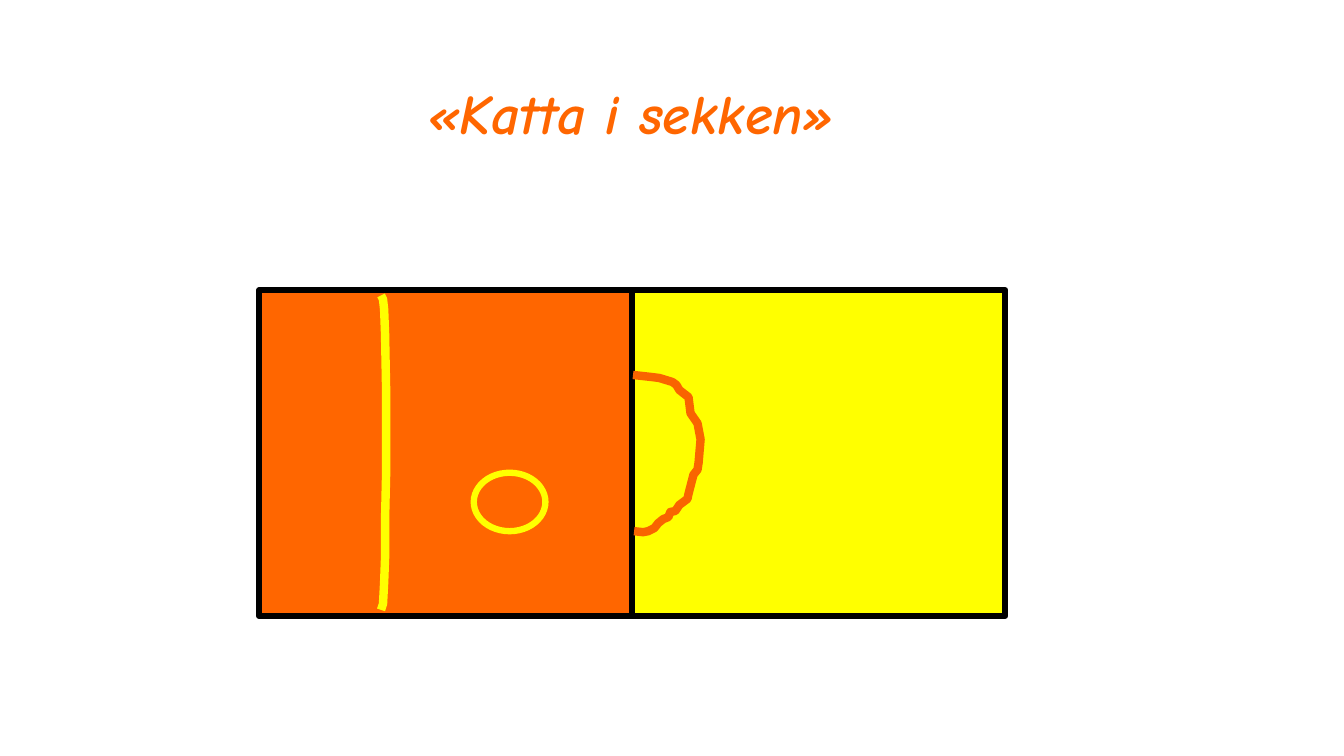
from dataclasses import dataclass

from lxml import etree
from pptx import Presentation
from pptx.dml.color import RGBColor
from pptx.enum.shapes import MSO_SHAPE
from pptx.enum.text import MSO_ANCHOR, MSO_AUTO_SIZE, PP_ALIGN
from pptx.oxml.ns import qn
from pptx.shapes.autoshape import Shape
from pptx.slide import Slide
from pptx.util import Inches, Pt

RECTANGLE = MSO_SHAPE.RECTANGLE
CONNECTOR_DISC = MSO_SHAPE.FLOWCHART_CONNECTOR
BOTTOM = MSO_ANCHOR.BOTTOM
CENTER = PP_ALIGN.CENTER
NO_AUTOFIT = MSO_AUTO_SIZE.NONE
TITLE_ONLY = 5

WIDTH = Inches(13.33)
HEIGHT = Inches(7.5)


@dataclass(frozen=True)
class Theme:
    font: str = "Comic Neue"
    title_size: float = 40
    outline: float = 4.5
    stroke: float = 6
    orange: str = "FF6600"
    arc_orange: str = "F96400"
    yellow: str = "FFFF00"
    black: str = "000000"


@dataclass(frozen=True)
class Area:
    left: float
    top: float
    width: float
    height: float


@dataclass(frozen=True)
class Panel:
    kind: MSO_SHAPE
    area: Area
    fill: str
    line: str


@dataclass(frozen=True)
class Stroke:
    points: tuple[tuple[float, float], ...]
    color: str


THEME = Theme()
TITLE_AREA = Area(4.43, 3.33, 85, 16.67)
COURT = Area(19.28, 38.4, 55.52, 43.07)
HALF = COURT.width / 2

HALVES = [
    Panel(
        RECTANGLE,
        Area(COURT.left + column * HALF, COURT.top, HALF, COURT.height),
        fill,
        THEME.black,
    )
    for column, fill in enumerate((THEME.orange, THEME.yellow))
]
RING = Panel(CONNECTOR_DISC, Area(35.25, 62.53, 5.33, 7.73), THEME.orange, THEME.yellow)

THROW_LINE = Stroke(
    (
        (28.35, 39.07), (28.5, 39.6), (28.58, 40.93), (28.65, 44.13),
        (28.73, 51.87), (28.73, 62.4), (28.65, 68.8), (28.65, 73.87),
        (28.58, 77.07), (28.5, 79.87), (28.35, 80.67),
    ),
    THEME.yellow,
)
GOAL_ARC = Stroke(
    (
        (47.1, 49.6), (48.45, 49.87), (49.05, 50), (50.03, 50.53),
        (50.33, 50.93), (50.55, 51.6), (50.93, 52.13), (51.23, 52.53),
        (51.38, 54.67), (51.9, 56), (52.13, 58.13), (51.98, 61.2),
        (51.9, 62.13), (51.6, 62.8), (51.23, 65.33), (51.15, 66),
        (50.55, 66.8), (50.25, 67.6), (49.88, 67.73), (49.73, 68.4),
        (49.35, 68.67), (48.98, 69.2), (48.68, 69.87), (48.23, 70.27),
        (47.85, 70.4), (47.18, 70.27),
    ),
    THEME.arc_orange,
)


def across(percent: float) -> int:
    return round(WIDTH * percent / 100)


def down(percent: float) -> int:
    return round(HEIGHT * percent / 100)


def bounds(area: Area) -> tuple[int, int, int, int]:
    return across(area.left), down(area.top), across(area.width), down(area.height)


def set_line(shape: Shape, color: str, width: float) -> None:
    shape.shadow.inherit = False
    shape.line.color.rgb = RGBColor.from_string(color)
    shape.line.width = Pt(width)
    etree.SubElement(shape.line.fill._xPr, qn("a:round"))


def draw_panel(page: Slide, panel: Panel) -> None:
    shape = page.shapes.add_shape(panel.kind, *bounds(panel.area))
    shape.fill.solid()
    shape.fill.fore_color.rgb = RGBColor.from_string(panel.fill)
    set_line(shape, panel.line, THEME.outline)


def draw_stroke(page: Slide, stroke: Stroke) -> None:
    start, *rest = [(across(x), down(y)) for x, y in stroke.points]
    builder = page.shapes.build_freeform(*start)
    builder.add_line_segments(rest, close=False)
    shape = builder.convert_to_shape()
    shape.fill.background()
    set_line(shape, stroke.color, THEME.stroke)


def draw_title(page: Slide, text: str) -> None:
    title = page.shapes.title
    title.left, title.top, title.width, title.height = bounds(TITLE_AREA)
    frame = title.text_frame
    frame.text = text
    frame.word_wrap = True
    frame.auto_size = NO_AUTOFIT
    frame.vertical_anchor = BOTTOM
    para = frame.paragraphs[0]
    para.alignment = CENTER
    font = para.runs[0].font
    font.name = THEME.font
    font.size = Pt(THEME.title_size)
    font.bold = True
    font.italic = True
    font.color.rgb = RGBColor.from_string(THEME.orange)


def main() -> None:
    deck = Presentation()
    deck.slide_width = WIDTH
    deck.slide_height = HEIGHT
    page = deck.slides.add_slide(deck.slide_layouts[TITLE_ONLY])
    draw_title(page, "«Katta i sekken»")
    for half in HALVES:
        draw_panel(page, half)
    for stroke in (THROW_LINE, GOAL_ARC):
        draw_stroke(page, stroke)
    draw_panel(page, RING)
    deck.save("out.pptx")


if __name__ == "__main__":
    main()
